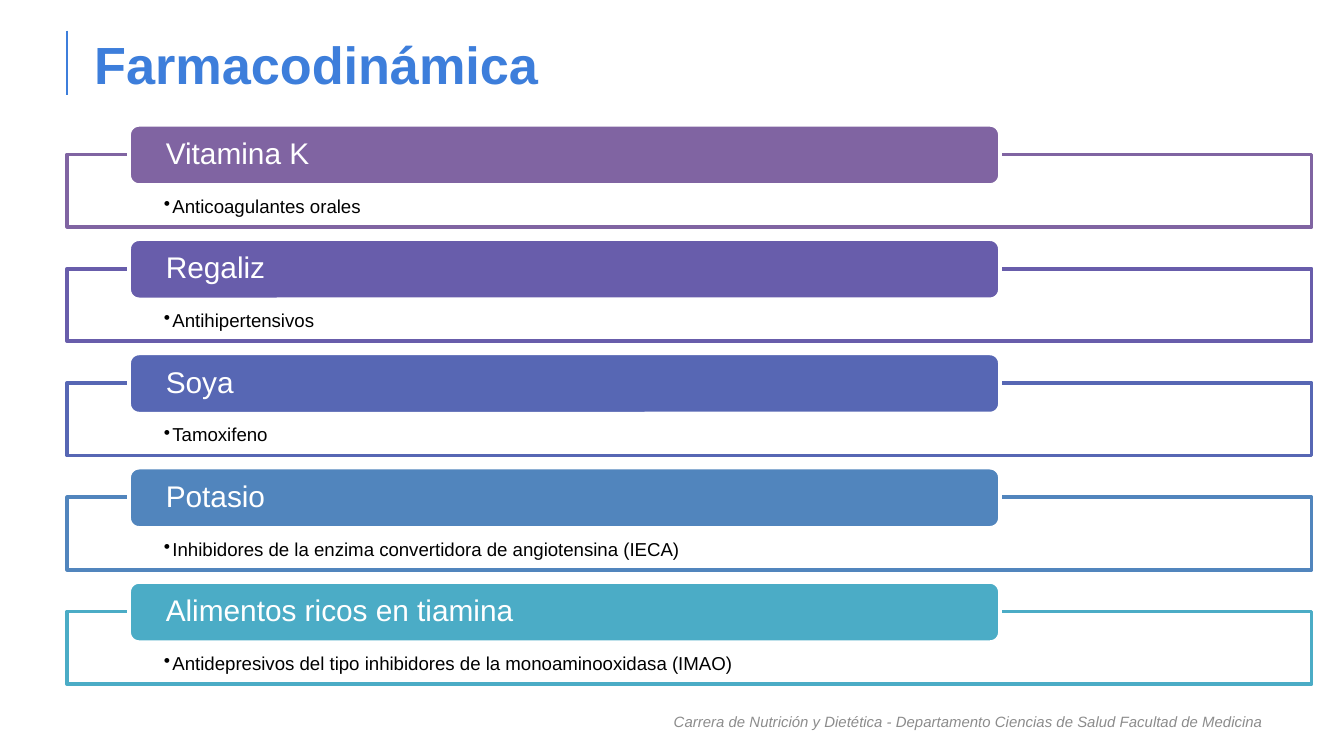
import dataclasses

import lxml.etree
import pptx
import pptx.dml.color
import pptx.enum.shapes
import pptx.enum.text
import pptx.oxml.ns
import pptx.util

Cm = pptx.util.Cm
Pt = pptx.util.Pt
Kind = pptx.enum.shapes.MSO_SHAPE
Align = pptx.enum.text.PP_ALIGN
Anchor = pptx.enum.text.MSO_ANCHOR
qn = pptx.oxml.ns.qn

COLORS = {
    "title": "3D7EDB",
    "foot": "8C8C8C",
    "text": "000000",
    "white": "FFFFFF",
    "purple": "8064A2",
    "violet": "685DAB",
    "indigo": "5767B4",
    "blue": "5185BD",
    "teal": "4BACC6",
}
LEFT = 1.27
TOP = 2.36
STEP = 2.16
DROP = 0.56


@dataclasses.dataclass(frozen=True)
class Item:
    head: str
    drug: str
    color: str


ITEMS = [
    Item("Vitamina K", "Anticoagulantes orales", "purple"),
    Item("Regaliz", "Antihipertensivos", "violet"),
    Item("Soya", "Tamoxifeno", "indigo"),
    Item("Potasio", "Inhibidores de la enzima convertidora de angiotensina (IECA)", "blue"),
    Item("Alimentos ricos en tiamina",
         "Antidepresivos del tipo inhibidores de la monoaminooxidasa (IMAO)", "teal"),
]


def rgb(name: str) -> pptx.dml.color.RGBColor:
    return pptx.dml.color.RGBColor.from_string(COLORS[name])


def write(shape, text: str, size: float, color: str, pad: tuple,
          anchor=Anchor.MIDDLE, align=Align.LEFT):
    """Fill the shape with one paragraph; pad is left, top, right, bottom in cm."""
    frame = shape.text_frame
    frame.text = text
    frame.word_wrap = True
    frame.auto_size = pptx.enum.text.MSO_AUTO_SIZE.NONE
    frame.vertical_anchor = anchor
    (frame.margin_left, frame.margin_top,
     frame.margin_right, frame.margin_bottom) = map(Cm, pad)
    para = frame.paragraphs[0]
    para.alignment = align
    font = para.runs[0].font
    font.name = "Arial"
    font.size = Pt(size)
    font.color.rgb = rgb(color)
    return para


def add_box(slide, kind, place: tuple, fill: str, line: str):
    shape = slide.shapes.add_shape(kind, *map(Cm, place))
    shape.shadow.inherit = False
    shape.fill.solid()
    shape.fill.fore_color.rgb = rgb(fill)
    shape.line.color.rgb = rgb(line)
    shape.line.width = Pt(2)
    return shape


def add_dot(para) -> None:
    """Give the paragraph a bullet with a hanging indent."""
    props = para._p.get_or_add_pPr()
    props.set("marL", str(Cm(0.16)))
    props.set("indent", str(-Cm(0.16)))
    lxml.etree.SubElement(props, qn("a:buChar")).set("char", "•")


def add_item(slide, item: Item, top: float) -> None:
    frame = add_box(slide, Kind.RECTANGLE, (LEFT, top + DROP, 23.52, 1.37),
                    "white", item.color)
    fill = frame._element.spPr.find(qn("a:solidFill"))
    lxml.etree.SubElement(fill[0], qn("a:alpha")).set("val", "90000")
    para = write(frame, item.drug, 10, "text", (1.83, 0.81, 1.83, 0.2), Anchor.TOP)
    para.line_spacing = 0.9
    add_dot(para)

    bar = add_box(slide, Kind.ROUNDED_RECTANGLE, (2.44, top, 16.46, 1.14),
                  item.color, "white")
    para = write(bar, item.head, 16, "white", (0.64, 0, 0.64, 0))
    para.line_spacing = 0.9


def add_title(slide) -> None:
    rule = slide.shapes.add_connector(pptx.enum.shapes.MSO_CONNECTOR.STRAIGHT,
                                      Cm(LEFT), Cm(0.58), Cm(LEFT), Cm(1.8))
    rule.line.color.rgb = rgb("title")
    rule.line.width = Pt(1)
    lxml.etree.SubElement(rule._element.spPr, qn("a:effectLst"))

    title = slide.shapes.title
    title.left, title.top, title.width, title.height = map(Cm, (LEFT, 0.58, 22.86, 1.24))
    para = write(title, "Farmacodinámica", 28, "title", (0.51, 0.3, 0.25, 0.3))
    para.runs[0].font.bold = True


def add_foot(slide) -> None:
    box = slide.shapes.add_textbox(*map(Cm, (LEFT, 13.26, 22.86, 0.76)))
    para = write(box, "Carrera de Nutrición y Dietética - Departamento Ciencias de Salud "
                 "Facultad de Medicina", 8, "foot", (0.25, 0.3, 0.25, 0.3),
                 align=Align.RIGHT)
    para.runs[0].font.italic = True


def main() -> None:
    deck = pptx.Presentation()
    deck.slide_width, deck.slide_height = Cm(25.4), Cm(14.29)
    slide = deck.slides.add_slide(deck.slide_layouts.get_by_name("Title Only"))
    add_title(slide)
    for row, item in enumerate(ITEMS):
        add_item(slide, item, TOP + row * STEP)
    add_foot(slide)
    deck.save("out.pptx")


if __name__ == "__main__":
    main()
